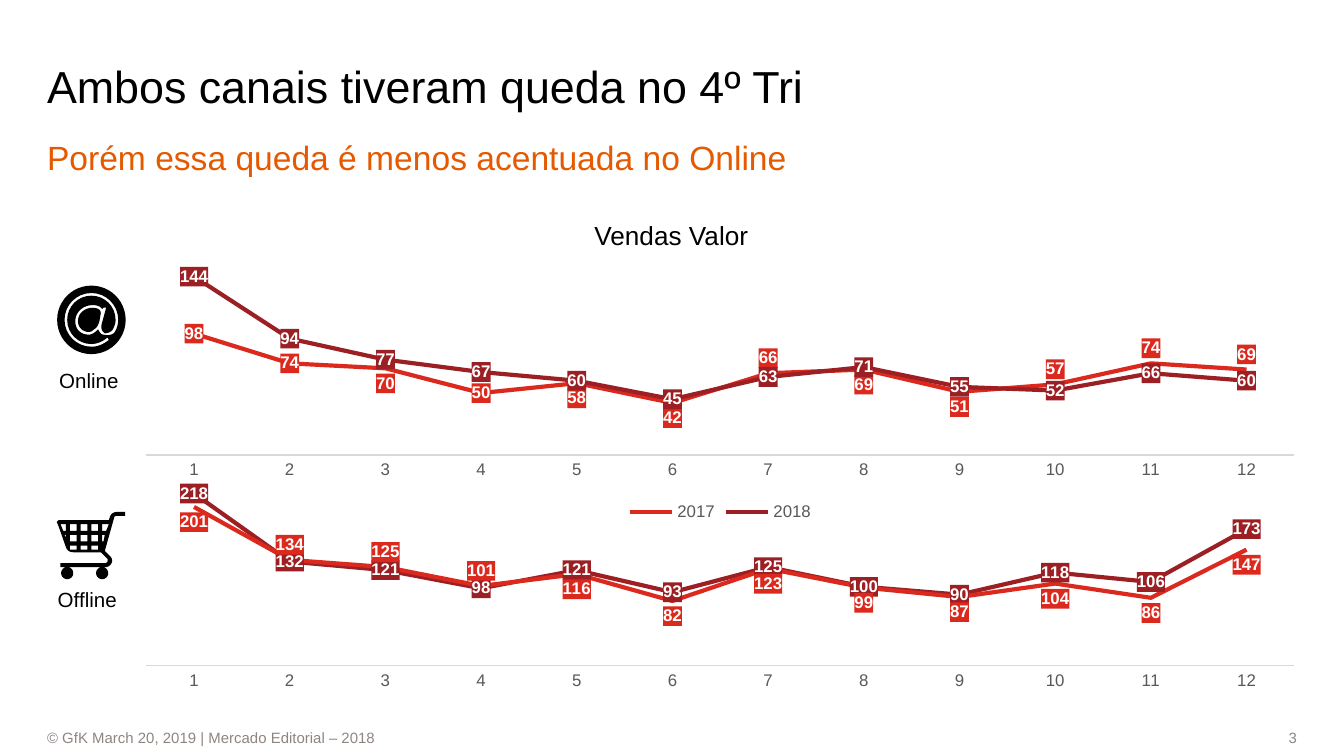
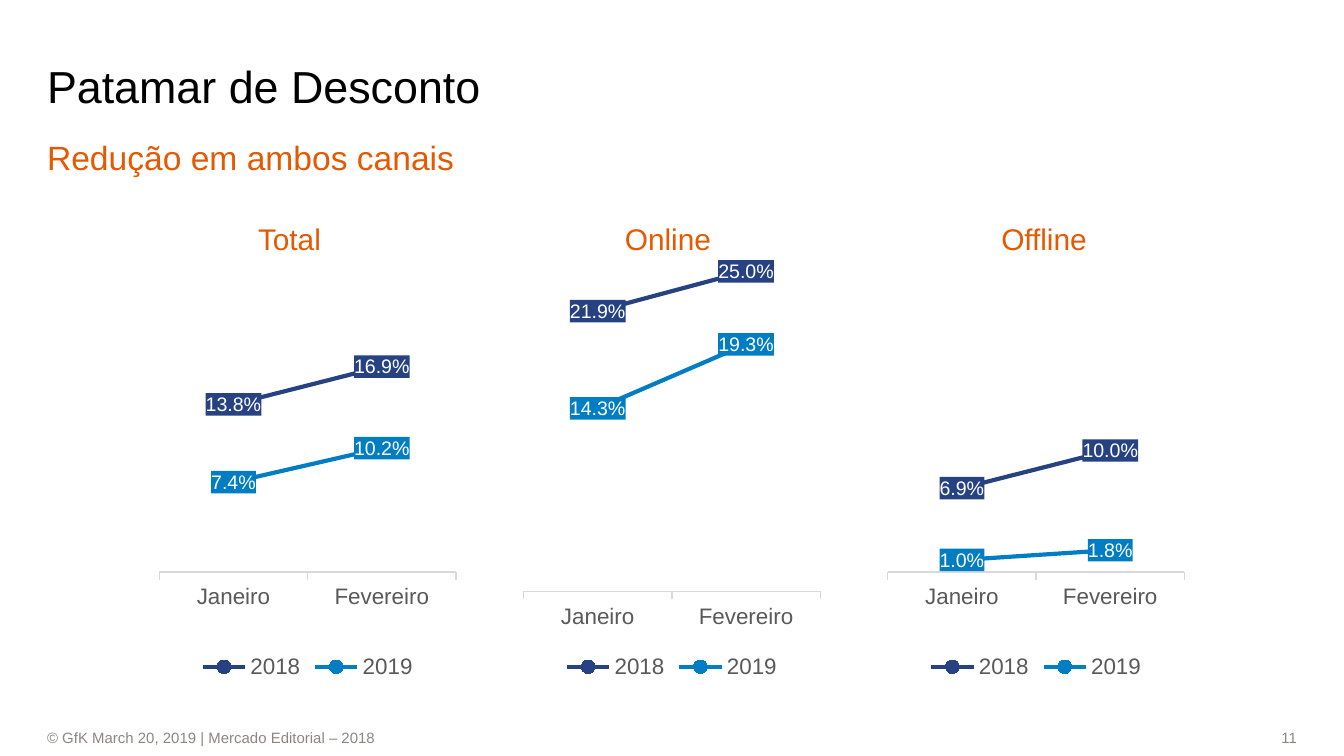
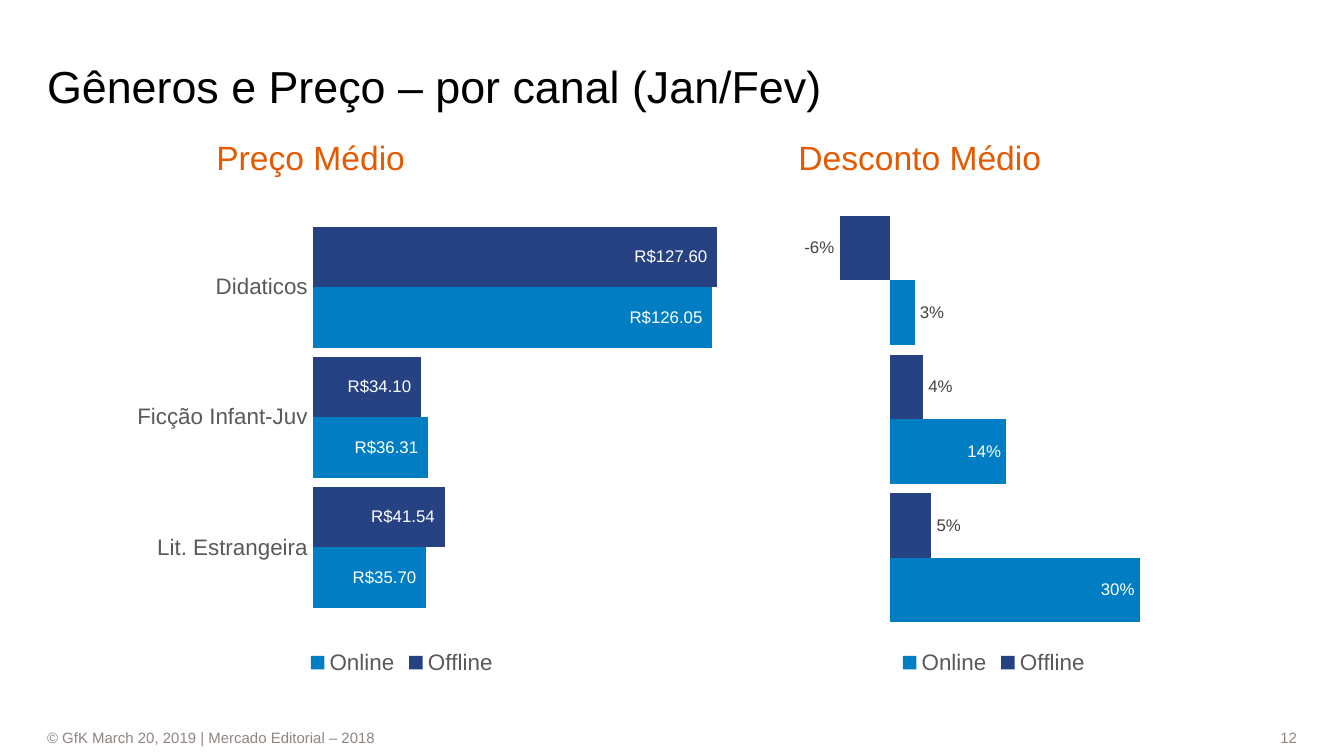
"""Build three slides on book market sales, discounts and prices by channel."""
import math

import pptx
import pptx.chart.data
import pptx.dml.color
import pptx.enum.chart
import pptx.enum.shapes
import pptx.enum.text
import pptx.oxml
import pptx.oxml.ns
import pptx.util

Inches, Pt = pptx.util.Inches, pptx.util.Pt
RGBColor = pptx.dml.color.RGBColor
ChartType = pptx.enum.chart.XL_CHART_TYPE
Position = pptx.enum.chart.XL_LABEL_POSITION
TickMark = pptx.enum.chart.XL_TICK_MARK
Align = pptx.enum.text.PP_ALIGN
Anchor = pptx.enum.text.MSO_ANCHOR
qn = pptx.oxml.ns.qn

BLACK = RGBColor(0x00, 0x00, 0x00)
WHITE = RGBColor(0xFF, 0xFF, 0xFF)
ORANGE = RGBColor(0xE5, 0x5A, 0x00)
TAUPE = RGBColor(0x8E, 0x85, 0x81)
GREY = RGBColor(0x59, 0x59, 0x59)
DARK_GREY = RGBColor(0x47, 0x42, 0x40)
PALE_GREY = RGBColor(0xD9, 0xD9, 0xD9)
RED = RGBColor(0xDC, 0x29, 0x1E)
WINE = RGBColor(0x9B, 0x1F, 0x23)
NAVY = RGBColor(0x26, 0x42, 0x83)
BLUE = RGBColor(0x00, 0x7D, 0xC3)

FONT = "Arial"
SLIDE_WIDTH = 10
SLIDE_HEIGHT = SLIDE_WIDTH * 9 / 16
FOOTER = "© GfK March 20, 2019 | Mercado Editorial – 2018"
FOOTER_TOP, FOOTER_HEIGHT = 5.41, 0.16
SUBTITLE_BOX = (0.35, 1, 9.29, 0.32)

MONTHS = [str(month) for month in range(1, 13)]
ABOVE, BELOW, CENTER = Position.ABOVE, Position.BELOW, Position.CENTER
INSIDE, OUTSIDE = Position.INSIDE_END, Position.OUTSIDE_END

SALES_STYLE = dict(kind=ChartType.LINE, categories=MONTHS, number_format="#,##0",
                   axis_size=9, label_size=9, bold=True, axis_line=PALE_GREY,
                   low=0)
ONLINE_SALES = dict(
    SALES_STYLE, box=(0.91, 1.87, 8.9, 2.05), plot=(0.02, 0.02, 0.96, 0.72),
    high=160, legend=True,
    series=[
        dict(name="2017", color=RED,
             values=[98, 74, 70, 50, 58, 42, 66, 69, 51, 57, 74, 69],
             moved={2: BELOW, 4: BELOW, 5: BELOW, 6: ABOVE, 7: BELOW,
                    8: BELOW, 9: ABOVE, 10: ABOVE, 11: ABOVE}),
        dict(name="2018", color=WINE,
             values=[144, 94, 77, 67, 60, 45, 63, 71, 55, 52, 66, 60]),
    ])
OFFLINE_SALES = dict(
    SALES_STYLE, box=(0.91, 3.45, 8.9, 1.73), plot=(0.02, 0.02, 0.96, 0.85),
    high=250, legend=False,
    series=[
        dict(name="Series 1", color=WINE,
             values=[218, 132, 121, 98, 121, 93, 125, 100, 90, 118, 106, 173]),
        dict(name="Series 2", color=RED,
             values=[201, 134, 125, 101, 116, 82, 123, 99, 87, 104, 86, 147],
             moved={month: ABOVE if month in (1, 2, 3) else BELOW
                    for month in range(12)}),
    ])

DISCOUNT_LEFT, DISCOUNT_STEP = 1.14, 2.71
DISCOUNTS = [
    ("Total", (1.92, 0.48), 0.75, [0.138, 0.169], [0.074, 0.102]),
    ("Online", (4.65, 0.71), 0.79, [0.219, 0.25], [0.143, 0.193]),
    ("Offline", (7.45, 0.71), 0.75, [0.069, 0.1], [0.01, 0.018]),
]
DISCOUNT_STYLE = dict(
    kind=ChartType.LINE_MARKERS, categories=["Janeiro", "Fevereiro"],
    number_format="0.0%", axis_size=12, label_size=10.5, axis_line=PALE_GREY,
    tick=TickMark.OUTSIDE, low=0, high=0.3, legend=True)

BAR_STYLE = dict(kind=ChartType.BAR_CLUSTERED, axis_size=12, label_size=9,
                 axis_line=None, legend=True)
PRICES = dict(
    BAR_STYLE, box=(0.35, 1.5, 5.28, 3.56), plot=(0.375, 0.043, 0.625, 0.816),
    categories=["Didaticos", "Ficção Infant-Juv", "Lit. Estrangeira"],
    number_format='_("R$"* #,##0.00_);_("R$"* \\(#,##0.00\\);'
                  '_("R$"* "-"??_);_(@_)',
    low=0, high=140,
    series=[
        dict(name="Offline", color=NAVY, values=[127.6, 34.1, 41.54],
             position=INSIDE),
        dict(name="Online", color=BLUE, values=[126.05, 36.31, 35.7],
             position=INSIDE),
    ])
GENRE_DISCOUNTS = dict(
    BAR_STYLE, box=(5.94, 1.5, 2.91, 3.56), plot=(0.02, 0.02, 0.96, 0.87),
    categories=["1", "2", "3"], number_format="0%", low=-0.1, high=0.35,
    hide_categories=True,
    series=[
        dict(name="Offline", color=NAVY, values=[-0.06, 0.04, 0.05],
             position=OUTSIDE, label_color=DARK_GREY),
        dict(name="Online", color=BLUE, values=[0.03, 0.14, 0.3],
             position=INSIDE, moved={0: OUTSIDE}),
    ])


def circle(x, y, radius):
    turns = [math.tau * step / 48 for step in range(48)]
    return [(x + radius * math.cos(t), y + radius * math.sin(t)) for t in turns]


def rectangle(left, top, right, bottom):
    return [(left, top), (right, top), (right, bottom), (left, bottom)]


AT_SIGN = [
    circle(0.68, 2.38, 0.255),
    [(0.73, 2.45), (0.74, 2.47, 0.75, 2.49, 0.77, 2.49),
     (0.81, 2.5, 0.85, 2.49, 0.86, 2.46), (0.87, 2.44, 0.88, 2.41, 0.88, 2.38),
     (0.88, 2.27, 0.79, 2.18, 0.68, 2.18), (0.57, 2.18, 0.48, 2.27, 0.48, 2.38),
     (0.48, 2.49, 0.57, 2.58, 0.68, 2.58), (0.73, 2.58, 0.77, 2.56, 0.81, 2.53),
     (0.8, 2.51), (0.77, 2.54, 0.72, 2.56, 0.68, 2.56),
     (0.58, 2.56, 0.5, 2.48, 0.5, 2.38), (0.5, 2.28, 0.58, 2.2, 0.68, 2.2),
     (0.78, 2.2, 0.86, 2.28, 0.86, 2.38), (0.86, 2.41, 0.85, 2.43, 0.84, 2.45),
     (0.83, 2.47, 0.8, 2.48, 0.78, 2.48), (0.75, 2.46, 0.75, 2.43, 0.76, 2.4),
     (0.79, 2.29), (0.77, 2.29), (0.76, 2.3),
     (0.75, 2.28, 0.72, 2.27, 0.69, 2.27), (0.62, 2.27, 0.56, 2.32, 0.56, 2.39),
     (0.56, 2.46, 0.61, 2.49, 0.66, 2.49), (0.68, 2.49, 0.7, 2.48, 0.72, 2.46)],
    [(0.75, 2.33), (0.75, 2.3, 0.72, 2.29, 0.69, 2.29),
     (0.63, 2.29, 0.58, 2.33, 0.58, 2.39), (0.58, 2.44, 0.62, 2.47, 0.66, 2.47),
     (0.68, 2.47, 0.69, 2.46, 0.7, 2.45), (0.72, 2.44, 0.73, 2.42, 0.74, 2.39)],
]
CART = [
    [(0.93, 3.84), (0.87, 3.84), (0.86, 3.84, 0.85, 3.84, 0.85, 3.85),
     (0.78, 4.1), (0.82, 4.14), (0.83, 4.15, 0.84, 4.17, 0.83, 4.19),
     (0.82, 4.21, 0.8, 4.22, 0.79, 4.22), (0.45, 4.22), (0.45, 4.19),
     (0.79, 4.19), (0.8, 4.18), (0.8, 4.16), (0.75, 4.11), (0.55, 4.11),
     (0.52, 4.11, 0.5, 4.1, 0.49, 4.07), (0.43, 3.9),
     (0.42, 3.89, 0.42, 3.88, 0.44, 3.87), (0.81, 3.87), (0.82, 3.84),
     (0.83, 3.82, 0.85, 3.81, 0.87, 3.81), (0.93, 3.81)],
    circle(0.5, 4.265, 0.045),
    circle(0.76, 4.265, 0.045),
    [(0.45, 3.9), (0.49, 3.9), (0.49, 3.95), (0.47, 3.95)],
    [(0.48, 3.98), (0.49, 3.98), (0.49, 4)],
    [(0.76, 3.9), (0.81, 3.9), (0.79, 3.95), (0.76, 3.95)],
    [(0.76, 3.98), (0.78, 3.98), (0.77, 4.03), (0.76, 4.03)],
] + [rectangle(left, top, left + 0.05, bottom)
     for left in (0.52, 0.6, 0.68)
     for top, bottom in ((3.9, 3.95), (3.98, 4.03), (4.06, 4.09))]


def flatten(contour):
    points = [contour[0]]
    for part in contour[1:]:
        if len(part) == 2:
            points.append(part)
            continue
        x0, y0 = points[-1]
        x1, y1, x2, y2, x3, y3 = part
        for t in (step / 8 for step in range(1, 9)):
            u = 1 - t
            weights = u ** 3, 3 * u * u * t, 3 * u * t * t, t ** 3
            points.append((
                sum(w * x for w, x in zip(weights, (x0, x1, x2, x3))),
                sum(w * y for w, y in zip(weights, (y0, y1, y2, y3)))))
    return [(Inches(x), Inches(y)) for x, y in points]


def add_icon(slide, contours):
    first, *others = [flatten(contour) for contour in contours]
    builder = slide.shapes.build_freeform(*first[0], scale=1.0)
    builder.add_line_segments(first[1:], close=True)
    for contour in others:
        builder.move_to(*contour[0])
        builder.add_line_segments(contour[1:], close=True)
    paint(builder.convert_to_shape(), BLACK)


def paint(shape, color):
    shape.shadow.inherit = False
    shape.fill.solid()
    shape.fill.fore_color.rgb = color
    shape.line.fill.background()


def style_font(font, size, color, bold=False):
    font.name, font.size, font.bold = FONT, Pt(size), bold
    font.color.rgb = color


def place(shape, box):
    shape.left, shape.top, shape.width, shape.height = map(Inches, box)


def write(shape, text, size, color, align=Align.LEFT, anchor=Anchor.TOP,
          top_inset=0.0, wrap=True):
    frame = shape.text_frame
    frame.text = text
    frame.auto_size = pptx.enum.text.MSO_AUTO_SIZE.NONE
    frame.word_wrap, frame.vertical_anchor = wrap, anchor
    frame.margin_left = frame.margin_right = frame.margin_bottom = 0
    frame.margin_top = Inches(top_inset)
    paragraph = frame.paragraphs[0]
    paragraph.alignment, paragraph.space_before = align, Pt(0)
    style_font(paragraph.runs[0].font, size, color)


def add_text(slide, box, text, size, color, **options):
    write(slide.shapes.add_textbox(*map(Inches, box)), text, size, color, **options)


def add_footer(slide, left, width, text, align):
    field = slide.shapes.add_shape(
        pptx.enum.shapes.MSO_SHAPE.RECTANGLE,
        *map(Inches, (left, FOOTER_TOP, width, FOOTER_HEIGHT)))
    paint(field, WHITE)
    write(field, text, 8, TAUPE, align, Anchor.MIDDLE)


def add_slide(deck, number, title, subtitle, subtitle_box=SUBTITLE_BOX):
    slide = deck.slides.add_slide(deck.slide_layouts[1])
    heading, body = slide.shapes.title, slide.placeholders[1]
    place(heading, (0.35, 0.21, 8.51, 0.63))
    write(heading, title, 24, BLACK, anchor=Anchor.BOTTOM)
    place(body, subtitle_box)
    write(body, subtitle, 18, ORANGE, top_inset=0.02)
    properties = body.text_frame.paragraphs[0]._p.get_or_add_pPr()
    properties.set("marL", "0")
    properties.set("indent", "0")
    properties.append(pptx.oxml.parse_xml(
        f'<a:buNone {pptx.oxml.ns.nsdecls("a")}/>'))
    add_footer(slide, 8.23, 1.42, str(number), Align.RIGHT)
    add_footer(slide, 0.35, 7.72, FOOTER, Align.LEFT)
    return slide


def fill_before(text_properties, color=None):
    fill = (f'<a:solidFill><a:srgbClr val="{color}"/></a:solidFill>'
            if color is not None else "<a:noFill/>")
    text_properties.addprevious(pptx.oxml.parse_xml(
        f'<c:spPr {pptx.oxml.ns.nsdecls("c", "a")}>{fill}'
        '<a:ln><a:noFill/></a:ln></c:spPr>'))


def set_plot_box(chart, plot):
    area = chart._chartSpace.find(".//" + qn("c:plotArea"))
    for layout in area.findall(qn("c:layout")):
        area.remove(layout)
    sizes = "".join(f'<c:{tag} val="{value}"/>' for tag, value in zip("xywh", plot))
    area.insert(0, pptx.oxml.parse_xml(
        f'<c:layout {pptx.oxml.ns.nsdecls("c")}><c:manualLayout>'
        '<c:layoutTarget val="inner"/><c:xMode val="edge"/><c:yMode val="edge"/>'
        f'{sizes}</c:manualLayout></c:layout>'))


def style_series(series, part, data):
    color, is_bar = part["color"], data["kind"] == ChartType.BAR_CLUSTERED
    if is_bar:
        series.format.fill.solid()
        series.format.fill.fore_color.rgb = color
        series.invert_if_negative = False
    else:
        series.smooth = False
        series.format.line.color.rgb = color
        series.format.line.width = Pt(2.25)
    if data["kind"] == ChartType.LINE_MARKERS:
        marker = series.marker
        marker.style, marker.size = pptx.enum.chart.XL_MARKER_STYLE.CIRCLE, 5
        marker.format.fill.solid()
        marker.format.fill.fore_color.rgb = color
        marker.format.line.color.rgb = color
    labels = series.data_labels
    labels.show_value = True
    labels.number_format = data["number_format"]
    labels.number_format_is_linked = False
    labels.position = part.get("position", CENTER)
    bold = data.get("bold", False)
    style_font(labels.font, data["label_size"], part.get("label_color", WHITE), bold)
    for index, position in part.get("moved", {}).items():
        label = series.points[index].data_label
        style_font(label.font, data["label_size"],
                   DARK_GREY if position == OUTSIDE else WHITE, bold)
        label.position = position
    if not is_bar:
        for text_properties in list(series._element.iter(qn("c:txPr"))):
            fill_before(text_properties, color)


def add_chart(slide, data):
    table = pptx.chart.data.CategoryChartData(number_format=data["number_format"])
    table.categories = data["categories"]
    for part in data["series"]:
        table.add_series(part["name"], part["values"])
    chart = slide.shapes.add_chart(
        data["kind"], *map(Inches, data["box"]), table).chart
    chart.has_title = False
    style_font(chart.font, 10, BLACK)
    fill_before(chart._chartSpace.find(qn("c:txPr")))
    set_plot_box(chart, data["plot"])

    values, categories = chart.value_axis, chart.category_axis
    values.minimum_scale, values.maximum_scale = data["low"], data["high"]
    values.has_major_gridlines = values.visible = False
    categories.has_major_gridlines = False
    categories.major_tick_mark = data.get("tick", TickMark.NONE)
    categories.minor_tick_mark = TickMark.NONE
    style_font(categories.tick_labels.font, data["axis_size"], GREY)
    if data["axis_line"] is None:
        categories.format.line.fill.background()
    else:
        categories.format.line.color.rgb = data["axis_line"]
        categories.format.line.width = Pt(0.75)
    categories.visible = not data.get("hide_categories", False)

    chart.has_legend = data["legend"]
    if data["legend"]:
        chart.legend.position = pptx.enum.chart.XL_LEGEND_POSITION.BOTTOM
        chart.legend.include_in_layout = False
        style_font(chart.legend.font, data["axis_size"], GREY)
    plot = chart.plots[0]
    plot.vary_by_categories = False
    if data["kind"] == ChartType.BAR_CLUSTERED:
        categories.reverse_order = True
        plot.gap_width, plot.overlap = 15, 0
    for series, part in zip(plot.series, data["series"]):
        style_series(series, part, data)


def build_sales(deck):
    slide = add_slide(deck, 3, "Ambos canais tiveram queda no 4º Tri",
                      "Porém essa queda é menos acentuada no Online")
    add_chart(slide, ONLINE_SALES)
    add_chart(slide, OFFLINE_SALES)
    add_text(slide, (4.42, 1.63, 1.15, 0.24), "Vendas Valor", 14, BLACK,
             align=Align.CENTER, wrap=False)
    for icon, left, top, channel in ((CART, 0.43, 4.37, "Offline"),
                                     (AT_SIGN, 0.44, 2.74, "Online")):
        add_icon(slide, icon)
        add_text(slide, (left, top, 0.5, 0.19), channel, 11, BLACK)


def build_discounts(deck):
    slide = add_slide(deck, 11, "Patamar de Desconto", "Redução em ambos canais")
    for column, (channel, (left, width), height, before, after) in enumerate(DISCOUNTS):
        add_chart(slide, dict(
            DISCOUNT_STYLE, plot=(0.02, 0.02, 0.96, height),
            box=(DISCOUNT_LEFT + column * DISCOUNT_STEP, 1.47, 2.3, 3.62),
            series=[dict(name="2018", color=NAVY, values=before),
                    dict(name="2019", color=BLUE, values=after)]))
        add_text(slide, (left, 1.62, width, 0.32), channel, 16, ORANGE,
                 top_inset=0.02)


def build_genres(deck):
    slide = add_slide(deck, 12, "Gêneros e Preço – por canal (Jan/Fev)",
                      "Preço Médio", (1.61, 1, 1.89, 0.32))
    add_chart(slide, PRICES)
    add_chart(slide, GENRE_DISCOUNTS)
    add_text(slide, (5.94, 1, 1.89, 0.32), "Desconto Médio", 18, ORANGE,
             top_inset=0.02)


def main():
    deck = pptx.Presentation()
    deck.slide_width, deck.slide_height = Inches(SLIDE_WIDTH), Inches(SLIDE_HEIGHT)
    build_sales(deck)
    build_discounts(deck)
    build_genres(deck)
    deck.save("out.pptx")


if __name__ == "__main__":
    main()
